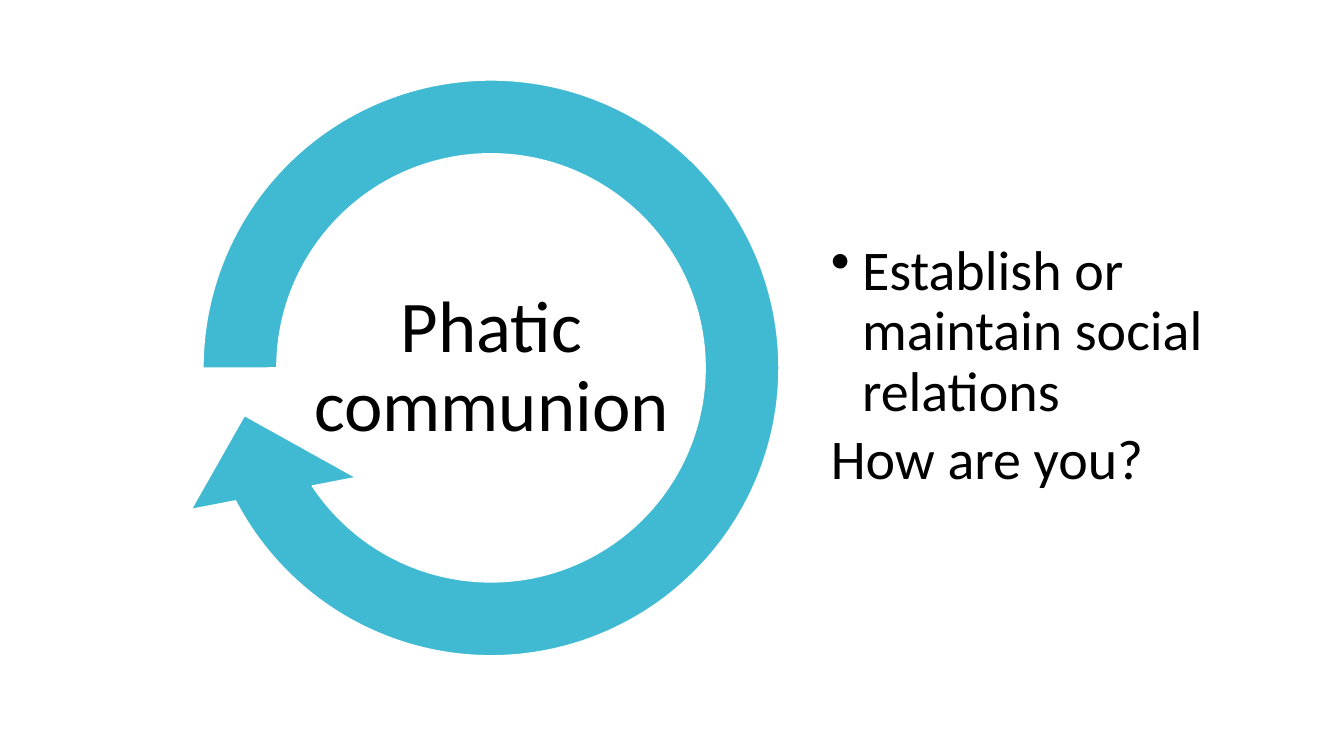
"""Build the phatic communion slide: a circular arrow with its explanation."""
from dataclasses import dataclass
from typing import NamedTuple

from lxml.etree import SubElement
from pptx import Presentation
from pptx.dml.color import RGBColor
from pptx.enum.shapes import MSO_SHAPE as Preset
from pptx.enum.text import MSO_ANCHOR as Anchor, PP_ALIGN as Align
from pptx.oxml.ns import qn
from pptx.slide import Slide
from pptx.util import Emu, Pt

EMU_PER_PX = 9144


@dataclass(frozen=True)
class Theme:
    font: str = "Calibri"
    ink: RGBColor = RGBColor(0x00, 0x00, 0x00)
    ring: RGBColor = RGBColor(0x40, 0xBA, 0xD2)
    edge: RGBColor = RGBColor(0xFF, 0xFF, 0xFF)
    edge_width: float = 0.85
    term_size: int = 52
    detail_size: int = 40
    line_spacing: float = 0.9


class Box(NamedTuple):
    left: int
    top: int
    width: int
    height: int


class Line(NamedTuple):
    text: str
    bullet: str = ""


@dataclass(frozen=True)
class Caption:
    box: Box
    lines: tuple[Line, ...]
    size: int
    gap: float
    align: Align = Align.LEFT
    level: int = 0
    hanging: int = 0


THEME = Theme()
INSET = 4
CYCLE = Box(155, 33, 664, 664)
CYCLE_ADJUSTMENTS = (0.11, 11.423, 90, 108, 0.125)
CAPTIONS = (
    Caption(
        Box(820, 231, 399, 266),
        (Line("Establish or maintain social relations", "•"), Line("How are you?")),
        THEME.detail_size, gap=0.15, level=1, hanging=31,
    ),
    Caption(
        Box(302, 273, 371, 185),
        (Line("Phatic communion"),),
        THEME.term_size, gap=0.35, align=Align.CENTER,
    ),
)


def px(length: int) -> Emu:
    return Emu(length * EMU_PER_PX)


def draw_cycle(slide: Slide, box: Box) -> None:
    cycle = slide.shapes.add_shape(Preset.CIRCULAR_ARROW, *map(px, box))
    for index, value in enumerate(CYCLE_ADJUSTMENTS):
        cycle.adjustments[index] = value
    cycle.shadow.inherit = False
    cycle.fill.solid()
    cycle.fill.fore_color.rgb = THEME.ring
    cycle.line.color.rgb = THEME.edge
    cycle.line.width = Pt(THEME.edge_width)


def write_line(paragraph, text: str, *, size: int, gap: float, align: Align,
               level: int = 0, hanging: int = 0, bullet: str = "") -> None:
    paragraph.alignment = align
    paragraph.level = level
    paragraph.line_spacing = THEME.line_spacing
    paragraph.space_after = Pt(size * gap)
    properties = paragraph._p.get_or_add_pPr()
    properties.set("marL", str(px(hanging)))
    properties.set("indent", str(px(-hanging)))
    if bullet:
        SubElement(properties, qn("a:buChar"), char=bullet)
    else:
        SubElement(properties, qn("a:buNone"))
    run = paragraph.add_run()
    run.text = text
    run.font.name = THEME.font
    run.font.size = Pt(size)
    run.font.color.rgb = THEME.ink


def draw_caption(slide: Slide, caption: Caption) -> None:
    frame = slide.shapes.add_textbox(*map(px, caption.box)).text_frame
    frame.word_wrap = True
    frame.vertical_anchor = Anchor.MIDDLE
    frame.margin_left = frame.margin_right = px(INSET)
    frame.margin_top = frame.margin_bottom = px(INSET)
    for index, line in enumerate(caption.lines):
        paragraph = frame.add_paragraph() if index else frame.paragraphs[0]
        write_line(paragraph, line.text, size=caption.size, gap=caption.gap,
                   align=caption.align, level=caption.level,
                   hanging=caption.hanging, bullet=line.bullet)


def main() -> None:
    deck = Presentation()
    deck.slide_width, deck.slide_height = px(1333), px(750)
    slide = deck.slides.add_slide(deck.slide_layouts[6])
    draw_cycle(slide, CYCLE)
    for caption in CAPTIONS:
        draw_caption(slide, caption)
    deck.save("out.pptx")


if __name__ == "__main__":
    main()
